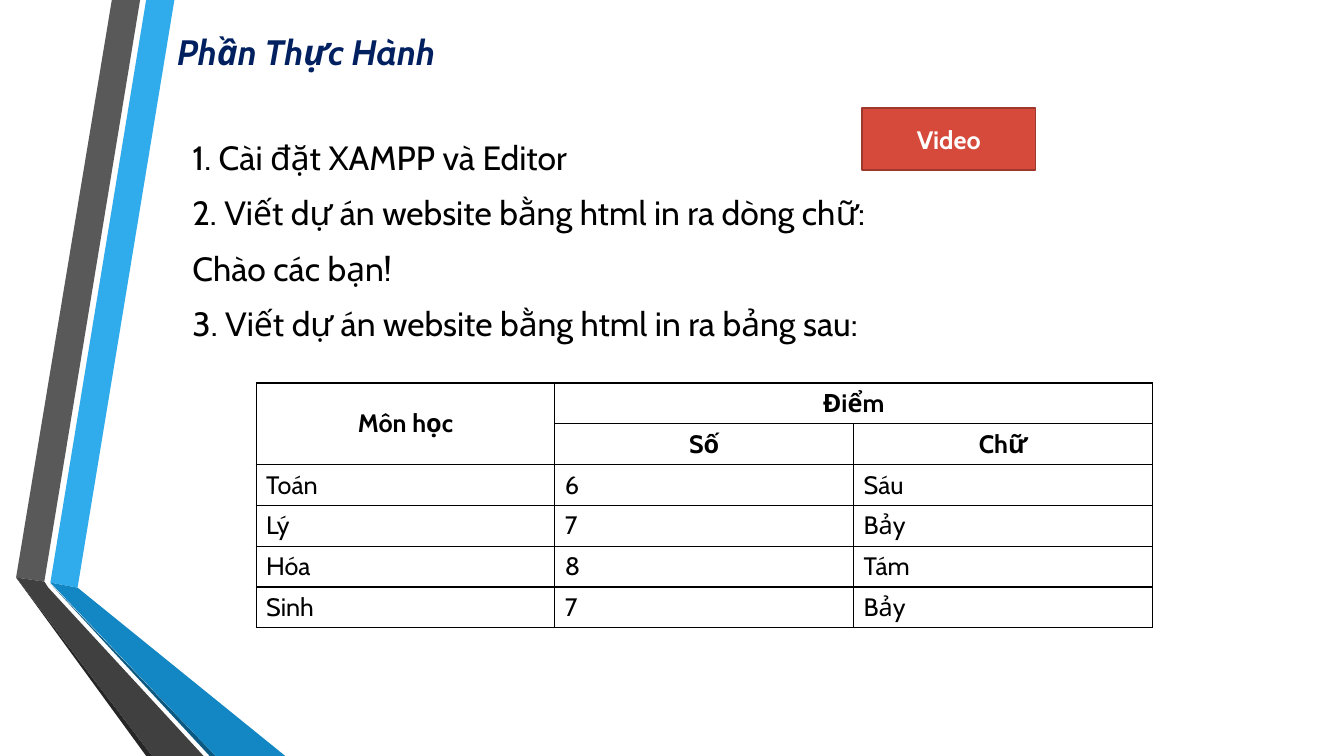
from lxml import etree
from pptx import Presentation
from pptx import util as u
from pptx.dml.color import RGBColor
from pptx.enum import shapes, text
from pptx.oxml.ns import qn

PX = 9144  # EMU per px, 100 px to the inch
FONT = "Cabin"
BLACK = RGBColor(0x00, 0x00, 0x00)
WHITE = RGBColor(0xFF, 0xFF, 0xFF)
NAVY = RGBColor(0x00, 0x20, 0x60)
RED = RGBColor(0xD6, 0x4A, 0x3B)
DARK_RED = RGBColor(0x9E, 0x37, 0x2C)
SKY = RGBColor(0x30, 0xAC, 0xEC)
BLUE = RGBColor(0x12, 0x87, 0xC3)
DEEP_BLUE = RGBColor(0x0C, 0x5A, 0x82)
GREY = RGBColor(0x59, 0x59, 0x59)
DARK_GREY = RGBColor(0x40, 0x40, 0x40)
CHARCOAL = RGBColor(0x26, 0x26, 0x26)

RIBBONS = [
    (SKY, [(50, 578), (77, 583), (173, 0), (145, 0)]),
    (GREY, [(139, 0), (111, 0), (16, 573), (44, 577)]),
    (CHARCOAL, [(16, 573), (145, 750), (151, 750)]),
    (DEEP_BLUE, [(50, 579), (208, 750), (214, 750)]),
    (BLUE, [(50, 578), (214, 750), (283, 750), (77, 583)]),
    (DARK_GREY, [(202, 750), (48, 583), (44, 577), (16, 573), (151, 750)]),
]
TASKS = [
    "1. Cài đặt XAMPP và Editor",
    "2. Viết dự án website bằng html in ra dòng chữ:",
    "Chào các bạn!",
    "3. Viết dự án website bằng html in ra bảng sau:",
]
HEADER_ROWS = 2
SCORES = [
    ("Môn học", "Điểm", ""),
    ("", "Số", "Chữ"),
    ("Toán", "6", "Sáu"),
    ("Lý", "7", "Bảy"),
    ("Hóa", "8", "Tám"),
    ("Sinh", "7", "Bảy"),
]


def emu(box):
    return [length * PX for length in box]


def write(para, words, size, color, bold=False, italic=False):
    para.text = words
    font = para.font
    font.name, font.size = FONT, u.Pt(size)
    font.bold, font.italic = bold, italic
    font.color.rgb = color


def add_text_frame(page, box):
    frame = page.shapes.add_textbox(*emu(box)).text_frame
    frame.word_wrap = True
    frame.vertical_anchor = text.MSO_ANCHOR.MIDDLE
    return frame


def add_ribbons(page, box):
    left, top = box[:2]
    for color, corners in RIBBONS:
        points = [(left + x, top + y) for x, y in corners]
        builder = page.shapes.build_freeform(*points[0], scale=PX)
        builder.add_line_segments(points[1:], close=True)
        ribbon = builder.convert_to_shape()
        ribbon.shadow.inherit = False
        ribbon.fill.solid()
        ribbon.fill.fore_color.rgb = color
        ribbon.line.fill.background()


def add_title(page, box):
    para = add_text_frame(page, box).paragraphs[0]
    para.line_spacing = 1.5
    write(para, "Phần Thực Hành", 25.2, NAVY, bold=True, italic=True)


def add_tasks(page, box):
    frame = add_text_frame(page, box)
    for index, task in enumerate(TASKS):
        para = frame.add_paragraph() if index else frame.paragraphs[0]
        if index:
            para.space_before = u.Pt(10.8)
        write(para, task, 24, BLACK)


def add_video_button(page, box):
    button = page.shapes.add_shape(
        shapes.MSO_SHAPE.ACTION_BUTTON_CUSTOM, *emu(box))
    button.shadow.inherit = False
    button.fill.solid()
    button.fill.fore_color.rgb = RED
    button.line.color.rgb = DARK_RED
    button.line.width = u.Pt(1.25)
    button.text_frame.vertical_anchor = text.MSO_ANCHOR.MIDDLE
    para = button.text_frame.paragraphs[0]
    para.alignment = text.PP_ALIGN.CENTER
    write(para, "Video", 18, WHITE, bold=True)


def set_borders(cell):
    """Draw all four sides; the schema wants lines ahead of the fill."""
    properties = cell._tc.get_or_add_tcPr()
    for position, side in enumerate(("a:lnL", "a:lnR", "a:lnT", "a:lnB")):
        line = etree.Element(qn(side), w=str(u.Pt(1)))
        fill = etree.SubElement(line, qn("a:solidFill"))
        etree.SubElement(fill, qn("a:srgbClr"), val=str(BLACK))
        properties.insert(position, line)


def add_score_table(page, box):
    table = page.shapes.add_table(len(SCORES), len(SCORES[0]), *emu(box)).table
    table.first_row = table.horz_banding = False
    for row, values in enumerate(SCORES):
        for column, value in enumerate(values):
            cell = table.cell(row, column)
            cell.fill.background()
            set_borders(cell)
            if not value:
                continue
            is_header = row < HEADER_ROWS
            para = cell.text_frame.paragraphs[0]
            if is_header:
                para.alignment = text.PP_ALIGN.CENTER
            write(para, value, 18, BLACK, bold=is_header)
    subject = table.cell(0, 0)
    subject.vertical_anchor = text.MSO_ANCHOR.MIDDLE
    subject.merge(table.cell(1, 0))
    table.cell(0, 1).merge(table.cell(0, 2))


def add_practice_slide(deck):
    page = deck.slides.add_slide(deck.slide_layouts[6])
    add_ribbons(page, (0, 0, 283, 750))
    add_title(page, (166, 6, 1096, 70))
    add_tasks(page, (181, 126, 1127, 224))
    add_video_button(page, (855, 107, 172, 62))
    add_score_table(page, (254, 380, 889, 243))


def main():
    deck = Presentation()
    deck.slide_width, deck.slide_height = emu((1333, 750))
    add_practice_slide(deck)
    deck.save("out.pptx")


if __name__ == "__main__":
    main()
